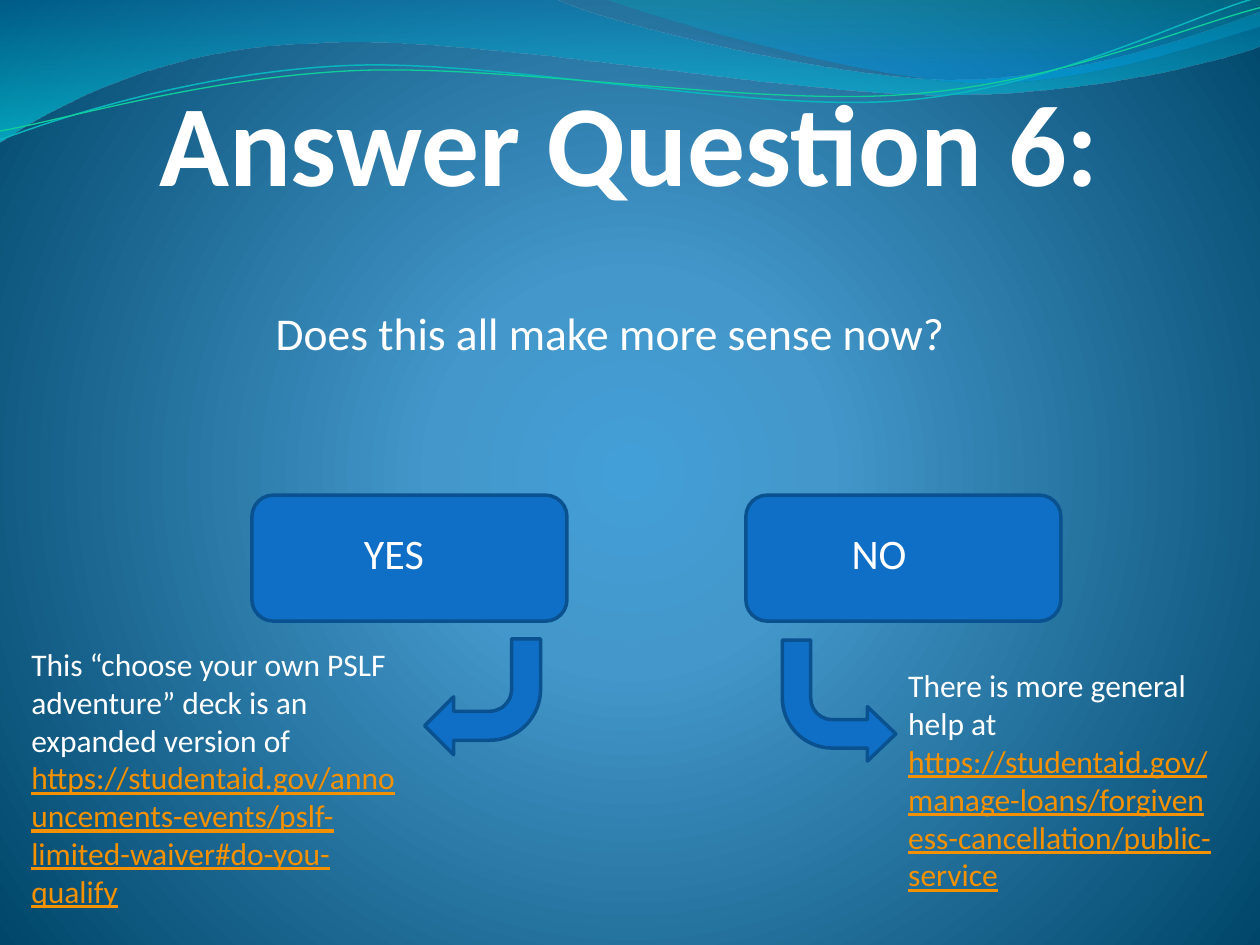
from math import cos, radians, sin
from pptx import Presentation
from pptx.dml.color import RGBColor
from pptx.enum.shapes import MSO_SHAPE
from pptx.enum.text import MSO_ANCHOR, MSO_AUTO_SIZE, PP_ALIGN
from pptx.oxml import parse_xml
from pptx.oxml.ns import nsdecls, qn
from pptx.util import Inches, Pt

WHITE = RGBColor(0xFF, 0xFF, 0xFF)
BLUE = RGBColor(0x0F, 0x6F, 0xC6)
DARK_BLUE = RGBColor(0x0A, 0x51, 0x90)
ORANGE = RGBColor(0xF4, 0x91, 0x00)
TEAL = RGBColor(0x09, 0xB6, 0xBE)
GREEN = RGBColor(0x10, 0xCF, 0x9B)
SKY = RGBColor(0x43, 0x9F, 0xD7)
MID_SKY = RGBColor(0x43, 0x97, 0xCA)
DEEP_SEA = RGBColor(0x00, 0x46, 0x6A)
WAVE_TOP = RGBColor(0x00, 0x79, 0xAD)
WAVE_FOOT = RGBColor(0x00, 0xE9, 0xF7)
CREST_TOP = RGBColor(0x00, 0xAB, 0xB4)
CREST_FOOT = RGBColor(0x00, 0x99, 0xE4)

DOWNWARD = '<a:lin ang="5400000" scaled="0"/>'
FROM_CENTRE = ('<a:path path="circle"><a:fillToRect l="50000" t="50000" '
               'r="50000" b="50000"/></a:path>')
UNITS_PER_INCH = 1000
STRAND_TILT = 2.7
STRAND_CENTRE = (4.99, 0.58)

WAVE = [(0, 0), (4.4, -0.01),
        (4.76, 0.17, 6.64, 0.63, 7.58, 0.63), (8.53, 0.63, 9.58, 0.26, 10, 0.09),
        (10.01, 0.36),
        (9.83, 0.44, 8.7, 0.76, 7.46, 0.75), (6.22, 0.75, 3.82, 0.28, 2.57, 0.34),
        (1.29, 0.36, 0.46, 0.83, -0.01, 1.13)]
CREST = [(4.79, -0.01),
         (5.09, 0.11, 6.82, 0.62, 7.69, 0.65), (8.56, 0.69, 9.61, 0.32, 10, 0.21),
         (10, 0)]
TEAL_STRAND = [(0, 1.11),
               (0.48, 0.93, 1.58, 0.57, 2.77, 0.52), (3.95, 0.47, 5.93, 0.89, 7.13, 0.8),
               (8.33, 0.71, 9.38, 0.15, 9.98, -0.02)]
GREEN_STRAND = [(0, 1.04),
                (0.47, 0.96, 1.64, 0.61, 2.83, 0.56), (4.03, 0.51, 5.97, 0.84, 7.17, 0.75),
                (8.36, 0.67, 9.41, 0.21, 10, 0.06)]


def apply_format(target, values):
    for name, value in values.items():
        setattr(target, name, value)


def gradient(stops, direction):
    marks = "".join(
        f'<a:gs pos="{position * 1000}"><a:srgbClr val="{color}">'
        f'<a:alpha val="{opacity * 1000}"/></a:srgbClr></a:gs>'
        for position, color, opacity in stops)
    return parse_xml(f'<a:gradFill {nsdecls("a")} rotWithShape="1">'
                     f'<a:gsLst>{marks}</a:gsLst>{direction}</a:gradFill>')


def paint_background(slide):
    slide.background.fill.solid()
    solid = slide.element.find(".//" + qn("p:bgPr")).find(qn("a:solidFill"))
    stops = [(0, SKY, 100), (25, MID_SKY, 100), (100, DEEP_SEA, 100)]
    solid.getparent().replace(solid, gradient(stops, FROM_CENTRE))


def turn(point, degrees):
    dx, dy = (value - centre for value, centre in zip(point, STRAND_CENTRE))
    c, s = cos(radians(degrees)), sin(radians(degrees))
    return STRAND_CENTRE[0] + dx * c - dy * s, STRAND_CENTRE[1] + dx * s + dy * c


def add_outline(slide, path, close, tilt=0):
    steps = [[tuple(round(value * UNITS_PER_INCH) for value in turn(step[i:i + 2], tilt))
              for i in range(0, len(step), 2)] for step in path]
    ends = [step[-1] for step in steps]
    left, top = map(min, zip(*ends))
    builder = slide.shapes.build_freeform(*ends[0], scale=Inches(1) / UNITS_PER_INCH)
    builder.add_line_segments(ends[1:], close=close)
    outline = builder.convert_to_shape()
    outline.shadow.inherit = False
    outline.rotation = -tilt % 360
    segments = list(outline.element.iter(qn("a:lnTo")))
    for segment, step in zip(segments, steps[1:]):
        if len(step) == 3:
            points = "".join(f'<a:pt x="{x - left}" y="{y - top}"/>' for x, y in step)
            curve = parse_xml(f'<a:cubicBezTo {nsdecls("a")}>{points}</a:cubicBezTo>')
            segment.getparent().replace(segment, curve)
    return outline


def add_wave(slide, path, stops):
    wave = add_outline(slide, path, True)
    wave.line.fill.background()
    wave.fill.solid()
    solid = wave.element.spPr.find(qn("a:solidFill"))
    solid.getparent().replace(solid, gradient(stops, DOWNWARD))


def add_strand(slide, path, color, width):
    strand = add_outline(slide, path, False, STRAND_TILT)
    strand.fill.background()
    strand.line.color.rgb = color
    strand.line.width = Pt(width)


def write(frame, runs, size, align=PP_ALIGN.LEFT, bold=False):
    paragraph = frame.paragraphs[0]
    paragraph.alignment = align
    for words, color, underline in runs:
        run = paragraph.add_run()
        run.text = words
        apply_format(run.font, {"name": "Calibri", "size": Pt(size), "bold": bold,
                                "underline": underline})
        run.font.color.rgb = color


def add_title(slide, words):
    title = slide.shapes.title
    apply_format(title, {"left": Inches(0.71), "top": Inches(0.39),
                         "width": Inches(8.59), "height": Inches(1.44)})
    apply_format(title.text_frame, {
        "vertical_anchor": MSO_ANCHOR.MIDDLE, "auto_size": MSO_AUTO_SIZE.NONE,
        "margin_left": 0, "margin_top": 0, "margin_right": Inches(0.02),
        "margin_bottom": 0, "word_wrap": True})
    write(title.text_frame, [(words, WHITE, False)], 66, PP_ALIGN.CENTER, True)


def add_text(slide, place, runs, size, align=PP_ALIGN.LEFT):
    frame = slide.shapes.add_textbox(*map(Inches, place)).text_frame
    frame.word_wrap = True
    write(frame, runs, size, align)
    return frame


def add_blue_shape(slide, kind, place, adjustments):
    shape = slide.shapes.add_shape(kind, *map(Inches, place))
    shape.shadow.inherit = False
    for index, value in enumerate(adjustments):
        shape.adjustments[index] = value
    shape.fill.solid()
    shape.fill.fore_color.rgb = BLUE
    shape.line.color.rgb = DARK_BLUE
    shape.line.width = Pt(2)
    return shape


def add_arrow(slide, place, head, points_right):
    arrow = add_blue_shape(slide, MSO_SHAPE.BENT_ARROW, place, [0.25, head, 0.25, 0.44])
    arrow.rotation = 180
    if points_right:
        arrow.element.spPr.find(qn("a:xfrm")).set("flipH", "1")


def main():
    deck = Presentation()
    apply_format(deck, {"slide_width": Inches(10), "slide_height": Inches(7.5)})
    slide = deck.slides.add_slide(deck.slide_layouts[5])
    paint_background(slide)
    add_wave(slide, WAVE, [(0, WAVE_TOP, 45), (100, WAVE_FOOT, 55)])
    add_wave(slide, CREST, [(0, CREST_TOP, 30), (80, CREST_FOOT, 45),
                            (100, CREST_FOOT, 45)])
    add_strand(slide, TEAL_STRAND, TEAL, 0.85)
    add_strand(slide, GREEN_STRAND, GREEN, 0.75)

    add_title(slide, "Answer Question 6:")
    question = add_text(slide, (0.58, 1.83, 8.59, 2.43),
                        [("Does this all make more sense now?", WHITE, False)],
                        26, PP_ALIGN.CENTER)
    apply_format(question, {"margin_left": 0, "margin_top": Inches(0.59),
                            "margin_right": Inches(0.06)})

    for answer, button_left, label_left, label_width in (("YES", 2, 2.79, 0.92),
                                                         ("NO", 5.92, 6.66, 1.09)):
        add_blue_shape(slide, MSO_SHAPE.ROUNDED_RECTANGLE,
                       (button_left, 3.93, 2.5, 1), [0.17])
        add_text(slide, (label_left, 4.14, label_width, 0.5),
                 [(answer, WHITE, False)], 24)

    add_arrow(slide, (3.37, 5.07, 0.92, 0.92), 0.25, False)
    add_arrow(slide, (6.21, 5.08, 0.9, 0.96), 0.24, True)

    advice = [
        ((0.15, 5.07, 3.1, 1.92),
         "This “choose your own PSLF adventure” deck is an expanded version of ",
         "https://studentaid.gov/announcements-events/pslf-limited-waiver#do-you-qualify"),
        ((7.11, 5.24, 2.67, 1.92),
         "There is more general help at ",
         "https://studentaid.gov/manage-loans/forgiveness-cancellation/public-service"),
    ]
    for place, lead, address in advice:
        add_text(slide, place, [(lead, WHITE, False), (address, ORANGE, True)], 18)
    deck.save("out.pptx")


if __name__ == "__main__":
    main()
